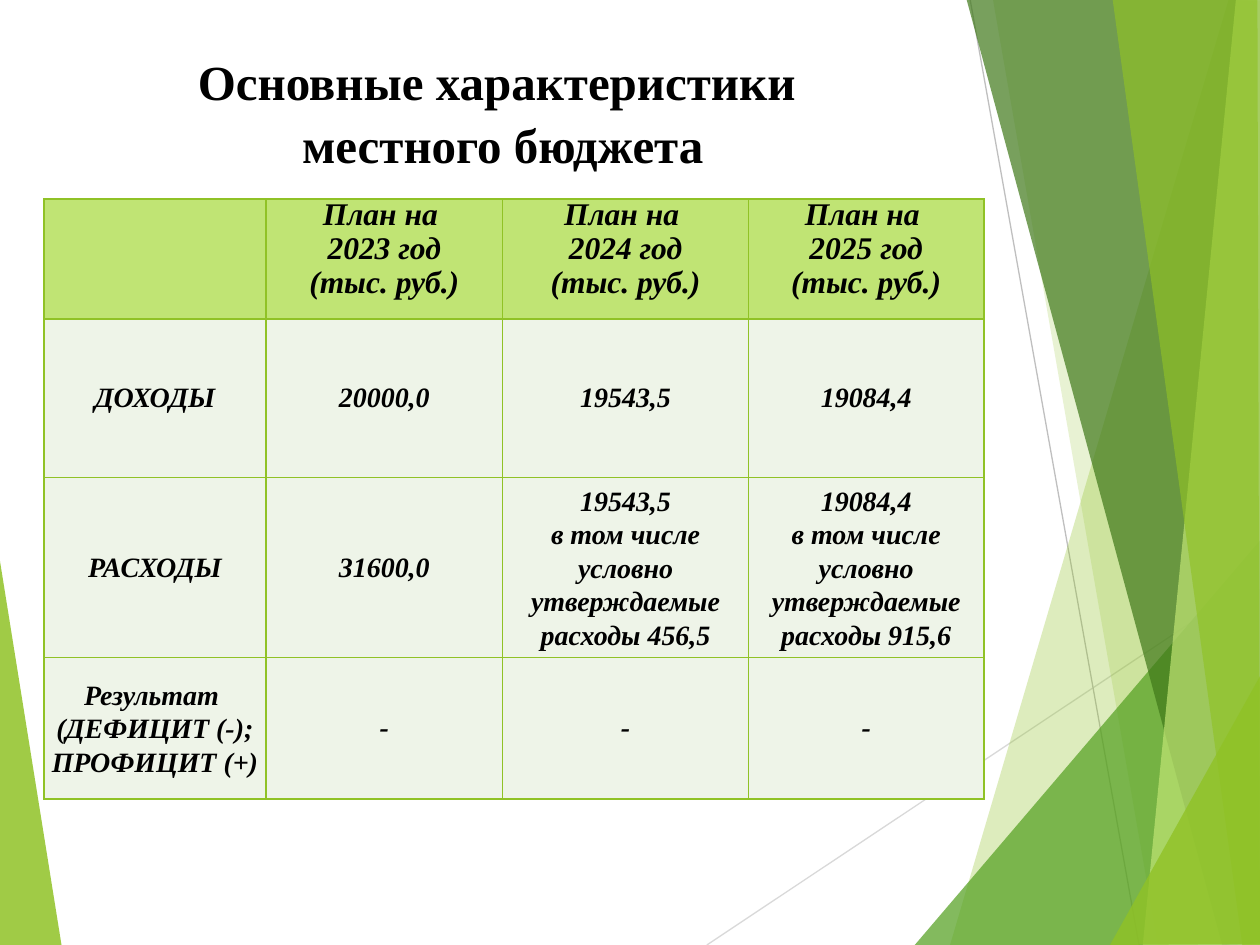
"""Build the slide with the main figures of the local budget."""
from dataclasses import dataclass

from lxml import etree
from pptx import Presentation
from pptx.dml.color import RGBColor
from pptx.enum.shapes import MSO_CONNECTOR
from pptx.enum.text import MSO_ANCHOR, MSO_AUTO_SIZE, PP_ALIGN
from pptx.oxml.ns import qn
from pptx.util import Inches, Pt

STRAIGHT = MSO_CONNECTOR.STRAIGHT
CENTER = PP_ALIGN.CENTER
TOP, MIDDLE = MSO_ANCHOR.TOP, MSO_ANCHOR.MIDDLE
NO_AUTOFIT = MSO_AUTO_SIZE.NONE
TITLE_ONLY = 5
FONT = "Times New Roman"
COLORS = {
    "text": "000000",
    "lime": "90C226",
    "light lime": "C0E474",
    "green": "54A021",
    "dark green": "3F7819",
    "pale": "EEF4E8",
    "light gray": "D9D9D9",
    "gray": "BFBFBF",
}
TITLE = ["Основные характеристики ", "местного бюджета"]
COLUMN_WIDTHS = [1.76, 1.88, 1.95, 1.87]
ROW_HEIGHTS = [0.95, 1.26, 1.43, 1.12]
RESERVE = "в том числе условно утверждаемые расходы "
ROWS = [
    [""] + [f"План на \n{year} год\n(тыс. руб.)" for year in (2023, 2024, 2025)],
    ["ДОХОДЫ", "20000,0", "19543,5", "19084,4"],
    ["РАСХОДЫ", "31600,0", f"19543,5\n{RESERVE}456,5", f"19084,4\n{RESERVE}915,6"],
    ["Результат \n(ДЕФИЦИТ (-); ПРОФИЦИТ (+)", "-", "-", "-"],
]


@dataclass
class Facet:
    """A translucent polygon of the background."""
    points: list[tuple[float, float]]
    color: str
    opacity: int


@dataclass
class Ray:
    """A thin straight line of the background."""
    start: tuple[float, float]
    end: tuple[float, float]
    color: str


LEFT_FACET = Facet([(-0.01, 4.39), (0.49, 7.51), (-0.01, 7.5)], "lime", 85)
RAYS = [
    Ray((5.61, 7.5), (10.01, 4.57), "light gray"),
    Ray((7.7, 0), (9.04, 7.5), "gray"),
]
RIGHT_FACETS = [
    Facet([(9.75, 0), (7.54, 7.5), (10.02, 7.51), (10.01, 0.01)], "lime", 30),
    Facet([(7.88, -0.01), (9.19, 7.5), (10.01, 7.5), (10.01, -0.01)], "lime", 20),
    Facet([(7.26, 7.5), (10, 4.29), (10.01, 7.5)], "green", 72),
    Facet([(7.67, -0.01), (9.7, 7.5), (10.01, 7.49), (10.01, -0.01)], "dark green", 70),
    Facet([(9.81, -0.01), (9.07, 7.5), (10.01, 7.5), (10, -0.01)], "light lime", 70),
    Facet([(8.83, -0.01), (9.86, 7.5), (10, 7.5), (9.98, -0.01)], "lime", 65),
    Facet([(8.81, 7.5), (10.01, 5.35), (10.01, 7.49)], "lime", 80),
]


def rgb(name: str) -> RGBColor:
    """Return the named colour."""
    return RGBColor.from_string(COLORS[name])


def draw_facet(page, facet: Facet) -> None:
    """Draw one translucent polygon."""
    points = [(Inches(x), Inches(y)) for x, y in facet.points]
    builder = page.shapes.build_freeform(*points[0])
    builder.add_line_segments(points[1:], close=True)
    shape = builder.convert_to_shape()
    shape.shadow.inherit = False
    shape.line.fill.background()
    shape.fill.solid()
    shape.fill.fore_color.rgb = rgb(facet.color)
    color = shape.fill._xPr.find(qn("a:solidFill"))[0]
    etree.SubElement(color, qn("a:alpha")).set("val", str(facet.opacity * 1000))


def draw_ray(page, ray: Ray) -> None:
    """Draw one thin line."""
    ends = [Inches(value) for value in ray.start + ray.end]
    line = page.shapes.add_connector(STRAIGHT, *ends)
    line.line.color.rgb = rgb(ray.color)
    line.line.width = Pt(0.75)
    etree.SubElement(line._element.spPr, qn("a:effectLst"))


def write_lines(frame, lines: list[str], size: int, italic: bool) -> None:
    """Write centred bold paragraphs."""
    frame.text = "\n".join(lines)
    for para in frame.paragraphs:
        para.alignment = CENTER
        para.font.name = FONT
        para.font.size = Pt(size)
        para.font.bold = True
        para.font.italic = italic
        para.font.color.rgb = rgb("text")


def write_title(page) -> None:
    """Place and fill the title placeholder."""
    title = page.shapes.title
    title.left, title.top = Inches(0.37), Inches(0.41)
    title.width, title.height = Inches(7.24), Inches(0.69)
    frame = title.text_frame
    frame.margin_left = frame.margin_right = frame.margin_top = frame.margin_bottom = 0
    frame.vertical_anchor = TOP
    frame.word_wrap = True
    frame.auto_size = NO_AUTOFIT
    write_lines(frame, TITLE, 28, False)
    frame.paragraphs[1].space_before = Pt(2)


def draw_borders(cell) -> None:
    """Outline a cell on its four sides, ahead of its fill."""
    properties = cell._tc.get_or_add_tcPr()
    for index, side in enumerate(("lnL", "lnR", "lnT", "lnB")):
        border = etree.Element(qn(f"a:{side}"), w=str(Pt(1)))
        fill = etree.SubElement(border, qn("a:solidFill"))
        etree.SubElement(fill, qn("a:srgbClr")).set("val", COLORS["lime"])
        properties.insert(index, border)


def fill_cell(cell, text: str, is_header: bool) -> None:
    """Format one table cell and write its text."""
    cell.fill.solid()
    cell.fill.fore_color.rgb = rgb("light lime" if is_header else "pale")
    cell.margin_left = cell.margin_right = cell.margin_top = cell.margin_bottom = 0
    cell.vertical_anchor = TOP if is_header else MIDDLE
    lines = text.split("\n")
    write_lines(cell.text_frame, lines, 18 if is_header else 16, True)
    if len(lines) > 1:
        for para in cell.text_frame.paragraphs:
            para.line_spacing = Pt(19.2)
    draw_borders(cell)


def draw_table(page) -> None:
    """Draw the budget table."""
    table = page.shapes.add_table(
        len(ROWS), len(COLUMN_WIDTHS), Inches(0.35), Inches(1.58),
        Inches(sum(COLUMN_WIDTHS)), Inches(sum(ROW_HEIGHTS)),
    ).table
    for column, width in zip(table.columns, COLUMN_WIDTHS):
        column.width = Inches(width)
    for row, height in zip(table.rows, ROW_HEIGHTS):
        row.height = Inches(height)
    for row_index, texts in enumerate(ROWS):
        for column_index, text in enumerate(texts):
            fill_cell(table.cell(row_index, column_index), text, row_index == 0)


def main() -> None:
    """Build and save the deck."""
    deck = Presentation()
    deck.slide_width, deck.slide_height = Inches(10), Inches(7.5)
    page = deck.slides.add_slide(deck.slide_layouts[TITLE_ONLY])
    draw_facet(page, LEFT_FACET)
    for ray in RAYS:
        draw_ray(page, ray)
    for facet in RIGHT_FACETS:
        draw_facet(page, facet)
    draw_table(page)
    write_title(page)
    deck.save("out.pptx")


if __name__ == "__main__":
    main()
